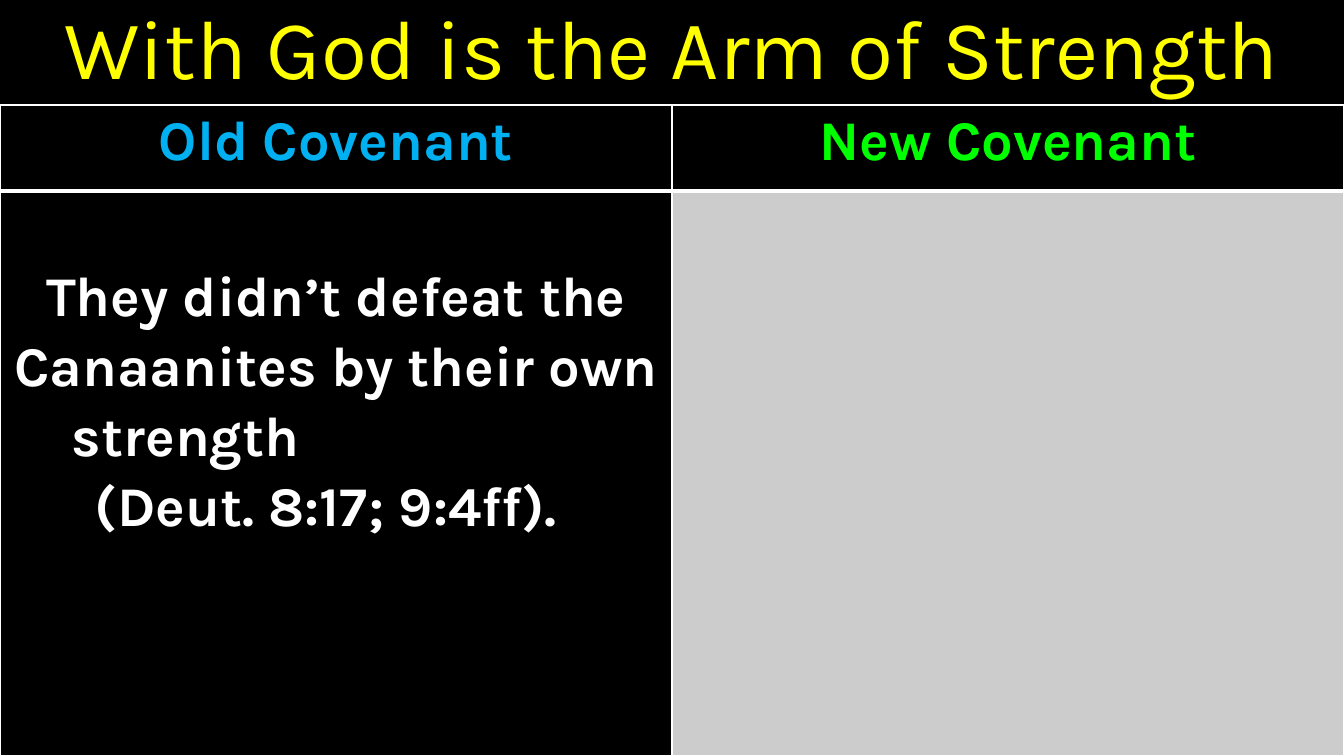
from lxml import etree
from pptx import Presentation
from pptx.dml.color import RGBColor
from pptx.enum.text import MSO_ANCHOR, MSO_AUTO_SIZE, PP_ALIGN
from pptx.oxml.ns import qn
from pptx.util import Pt

LEFT, CENTER = PP_ALIGN.LEFT, PP_ALIGN.CENTER
MIDDLE = MSO_ANCHOR.MIDDLE
NO_FIT = MSO_AUTO_SIZE.NONE
BLACK, WHITE, GRAY = "000000", "FFFFFF", "CCCCCC"
YELLOW, BLUE, GREEN = "FFFF00", "00B0F0", "00FF00"
WIDTH, HEIGHT, TABLE_TOP, HEADER_HEIGHT = 1344, 756, 105, 86
LINE_HEIGHT = 70


def px(length):
    """Turn px into EMU."""
    return round(length * 914400 / 100.8)


def color(value):
    """Turn a hex string into a colour."""
    return RGBColor.from_string(value)


def write(paragraph, text, size=40, ink=WHITE, bold=True, align=CENTER, spacing=1.07, indent=0):
    """Write formatted text into a paragraph."""
    paragraph.alignment = align
    paragraph.line_spacing = spacing
    if indent:
        properties = paragraph._p.get_or_add_pPr()
        properties.set("marL", str(px(indent)))
        properties.set("indent", "0")
    run = paragraph.add_run()
    run.text = text
    run.font.name = "Karla"
    run.font.size = Pt(size)
    run.font.bold = bold
    run.font.color.rgb = color(ink)


class CovenantSlide:
    """Hold the current slide and its element builders."""

    def __init__(self, presentation):
        """Add a title slide page with a black background."""
        self.slide = presentation.slides.add_slide(presentation.slide_layouts[5])
        self.slide.background.fill.solid()
        self.slide.background.fill.fore_color.rgb = color(BLACK)

    def title(self, text):
        """Place the title across the top."""
        shape = self.slide.shapes.title
        shape.left, shape.top, shape.width, shape.height = 0, 0, px(WIDTH), px(104)
        frame = shape.text_frame
        frame.auto_size = NO_FIT
        frame.word_wrap = True
        frame.vertical_anchor = MIDDLE
        write(frame.paragraphs[0], text, size=60, ink=YELLOW, bold=False, spacing=0.9)

    def table(self, row_heights, column_count):
        """Add a plain table and return it."""
        frame = self.slide.shapes.add_table(
            len(row_heights), column_count, 0, px(TABLE_TOP), px(WIDTH), px(sum(row_heights)))
        table = frame.table
        table.first_row = table.horz_banding = False
        for row, height in zip(table.rows, row_heights):
            row.height = px(height)
        return table

    def cell(self, cell, fill, top_line=1, bottom_line=1, top_margin=0):
        """Set the margins, borders and fill of a cell."""
        cell.margin_left = cell.margin_right = px(7)
        cell.margin_top, cell.margin_bottom = px(top_margin), 0
        properties = cell._tc.get_or_add_tcPr()
        for side, width in (("L", 1), ("R", 1), ("T", top_line), ("B", bottom_line)):
            line = etree.SubElement(properties, qn(f"a:ln{side}"), w=str(Pt(width)))
            solid = etree.SubElement(line, qn("a:solidFill"))
            etree.SubElement(solid, qn("a:srgbClr"), val=WHITE)
        cell.fill.solid()
        cell.fill.fore_color.rgb = color(fill)


def main():
    """Build and save the presentation."""
    presentation = Presentation()
    presentation.slide_width, presentation.slide_height = px(WIDTH), px(HEIGHT)
    page = CovenantSlide(presentation)
    page.title("With God is the Arm of Strength")

    table = page.table([HEADER_HEIGHT, HEIGHT - TABLE_TOP - HEADER_HEIGHT], 2)
    headings = (("Old Covenant", BLUE), ("New Covenant", GREEN))
    for column, (heading, ink) in enumerate(headings):
        header = table.cell(0, column)
        page.cell(header, BLACK, bottom_line=3)
        write(header.text_frame.paragraphs[0], heading, ink=ink)

    old_covenant = table.cell(1, 0)
    page.cell(old_covenant, BLACK, top_line=3, top_margin=LINE_HEIGHT)
    page.cell(table.cell(1, 1), GRAY, top_line=3)
    frame = old_covenant.text_frame
    write(frame.paragraphs[0], "They didn’t defeat the Canaanites by their own")
    for text, indent in (("strength", 65), ("(Deut. 8:17; 9:4ff).", 88)):
        write(frame.add_paragraph(), text, align=LEFT, indent=indent)
    presentation.save("out.pptx")


if __name__ == "__main__":
    main()
